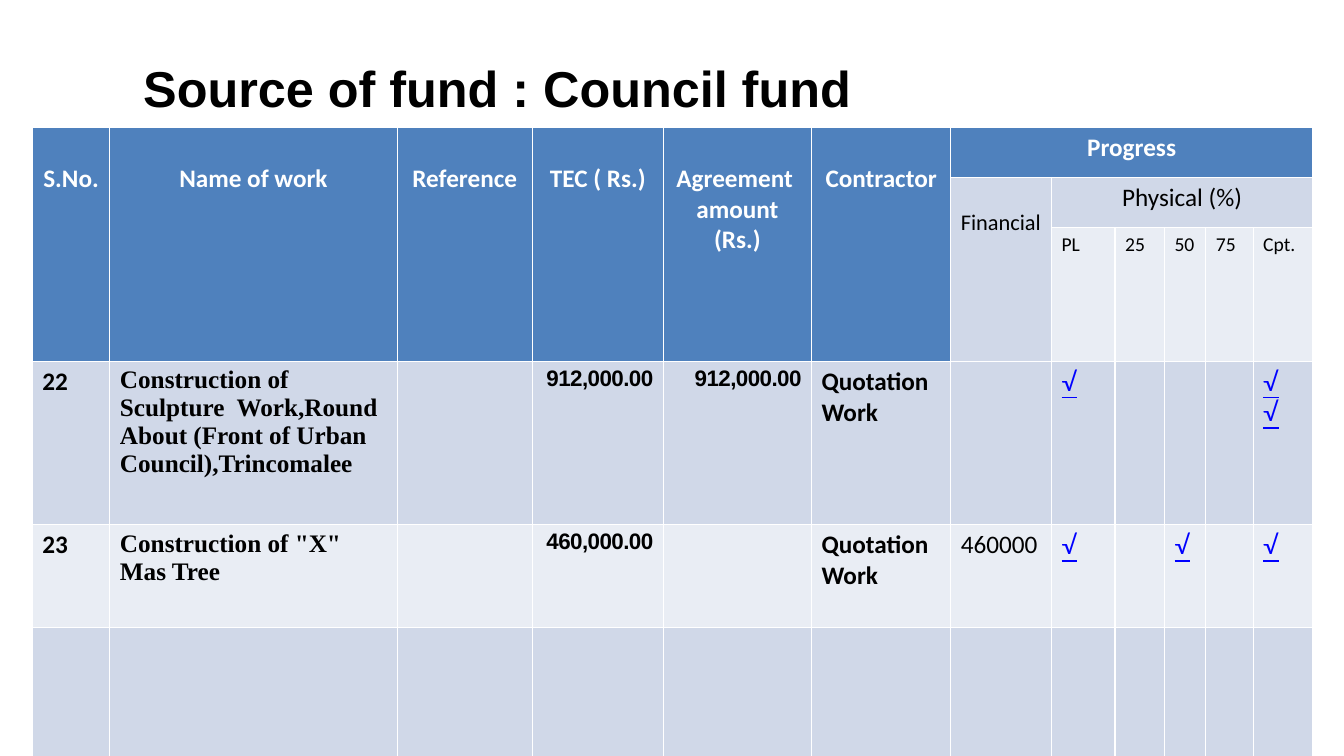
from pptx import Presentation
from pptx.dml.color import RGBColor
from pptx.enum.text import MSO_ANCHOR, PP_ALIGN as Align
from pptx.util import Inches, Pt

BLACK = RGBColor(0, 0, 0)
WHITE = RGBColor(255, 255, 255)
LINK = RGBColor(0, 0, 255)
HEAD = RGBColor(0x4F, 0x81, 0xBD)
DARK = RGBColor(0xD0, 0xD8, 0xE8)
LIGHT = RGBColor(0xE9, 0xED, 0xF4)

TITLE = "Source of fund : Council fund"
HEADS = ["S.No.", "Name of work", "Reference", "TEC ( Rs.)",
         "Agreement \namount (Rs.)", "Contractor"]
STEPS = ["PL", "25", "50", "75", "Cpt."]
WORKS = [
    ["22", "Construction of Sculpture  Work,Round About (Front of Urban Council),Trincomalee",
     "", "912,000.00", "912,000.00", "Quotation Work", "", "√", "", "", "", "√\n√"],
    ["23", 'Construction of "X" Mas Tree',
     "", "460,000.00", "", "Quotation Work", "460000", "√", "", "√", "", "√"],
    [""] * 12,
]
WIDTHS = [0.77, 2.85, 1.34, 1.3, 1.47, 1.38, 1, 0.63, 0.49, 0.41, 0.47, 0.59]
HEIGHTS = [0.5, 0.5, 1.31, 1.62, 1.02, 1.29]
TOP = 3
FIN = len(HEADS)

PLAIN = ("Calibri", 18, False, BLACK, Align.LEFT)
BOLD = ("Calibri", 18, True, BLACK, Align.LEFT)
NAME = ("Times New Roman", 18, True, BLACK, Align.LEFT)
MONEY = ("Arial", 16, True, BLACK, Align.RIGHT)
TICK = ("Lato", 18, False, LINK, Align.LEFT)
LABEL = ("Calibri", 18, True, WHITE, Align.CENTER)
SPAN = ("Calibri", 18, False, BLACK, Align.CENTER)
NOTE = ("Calibri", 16, False, BLACK, Align.LEFT)
SMALL = ("Calibri", 14, False, BLACK, Align.LEFT)
STYLES = [BOLD, NAME, PLAIN, MONEY, MONEY, BOLD, PLAIN] + [TICK] * len(STEPS)


def style(para, look):
    """Apply a font look to one paragraph."""
    face, size, bold, color, align = look
    para.alignment = align
    font = para.font
    font.name, font.size, font.bold = face, Pt(size), bold
    font.color.rgb = color
    if look is TICK:
        font.underline = True
    if look is MONEY:
        for run in para.runs:
            run.font._element.set("spc", "-40")


def write(cell, text, look, top=0.05):
    """Write styled text into a table cell."""
    cell.text = text
    cell.margin_top = Inches(top)
    for para in cell.text_frame.paragraphs:
        style(para, look)


def add_title(slide):
    """Place the slide title."""
    title = slide.shapes.title
    title.left, title.top = Inches(1.42), Inches(0.57)
    title.width, title.height = Inches(10.5), Inches(0.61)
    frame = title.text_frame
    frame.text = TITLE
    frame.margin_left = frame.margin_right = 0
    frame.margin_top = frame.margin_bottom = 0
    frame.vertical_anchor = MSO_ANCHOR.TOP
    style(frame.paragraphs[0], ("Arial", 36, True, BLACK, Align.LEFT))


def add_grid(slide):
    """Build the table of works."""
    rows, cols = len(HEIGHTS), len(WIDTHS)
    grid = slide.shapes.add_table(
        rows, cols, Inches(0.32), Inches(1.26),
        Inches(sum(WIDTHS)), Inches(sum(HEIGHTS))).table
    for col, width in zip(grid.columns, WIDTHS):
        col.width = Inches(width)
    for row, height in zip(grid.rows, HEIGHTS):
        row.height = Inches(height)
    for r in range(rows):
        for c in range(cols):
            fill = grid.cell(r, c).fill
            fill.solid()
            head = r == 0 or (r < TOP and c < FIN)
            fill.fore_color.rgb = HEAD if head else DARK if r % 2 else LIGHT

    for c, text in enumerate(HEADS):
        grid.cell(0, c).merge(grid.cell(TOP - 1, c))
        write(grid.cell(0, c), text, LABEL, 0.36)
    grid.cell(0, FIN).merge(grid.cell(0, cols - 1))
    write(grid.cell(0, FIN), "Progress", LABEL)
    grid.cell(1, FIN).merge(grid.cell(2, FIN))
    write(grid.cell(1, FIN), "Financial", NOTE, 0.32)
    grid.cell(1, FIN + 1).merge(grid.cell(1, cols - 1))
    write(grid.cell(1, FIN + 1), "Physical (%)", SPAN)
    for c, text in enumerate(STEPS, FIN + 1):
        write(grid.cell(2, c), text, SMALL)
    for r, work in enumerate(WORKS, TOP):
        for c, (text, look) in enumerate(zip(work, STYLES)):
            write(grid.cell(r, c), text, look)


def main():
    """Create the slide and save it."""
    deck = Presentation()
    deck.slide_width, deck.slide_height = Inches(13.33), Inches(7.5)
    slide = deck.slides.add_slide(deck.slide_layouts[5])
    add_title(slide)
    add_grid(slide)
    deck.save("out.pptx")


if __name__ == "__main__":
    main()
